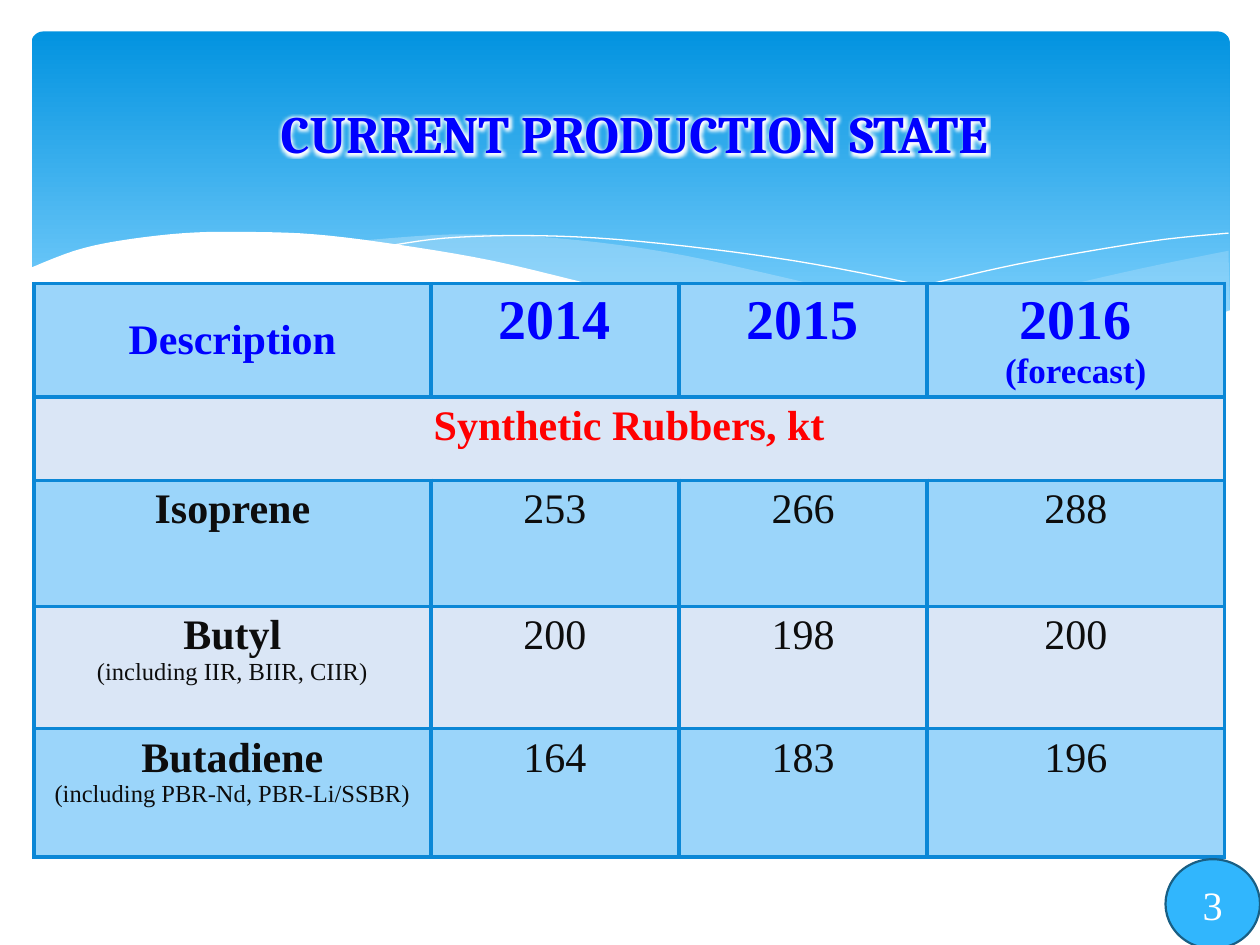
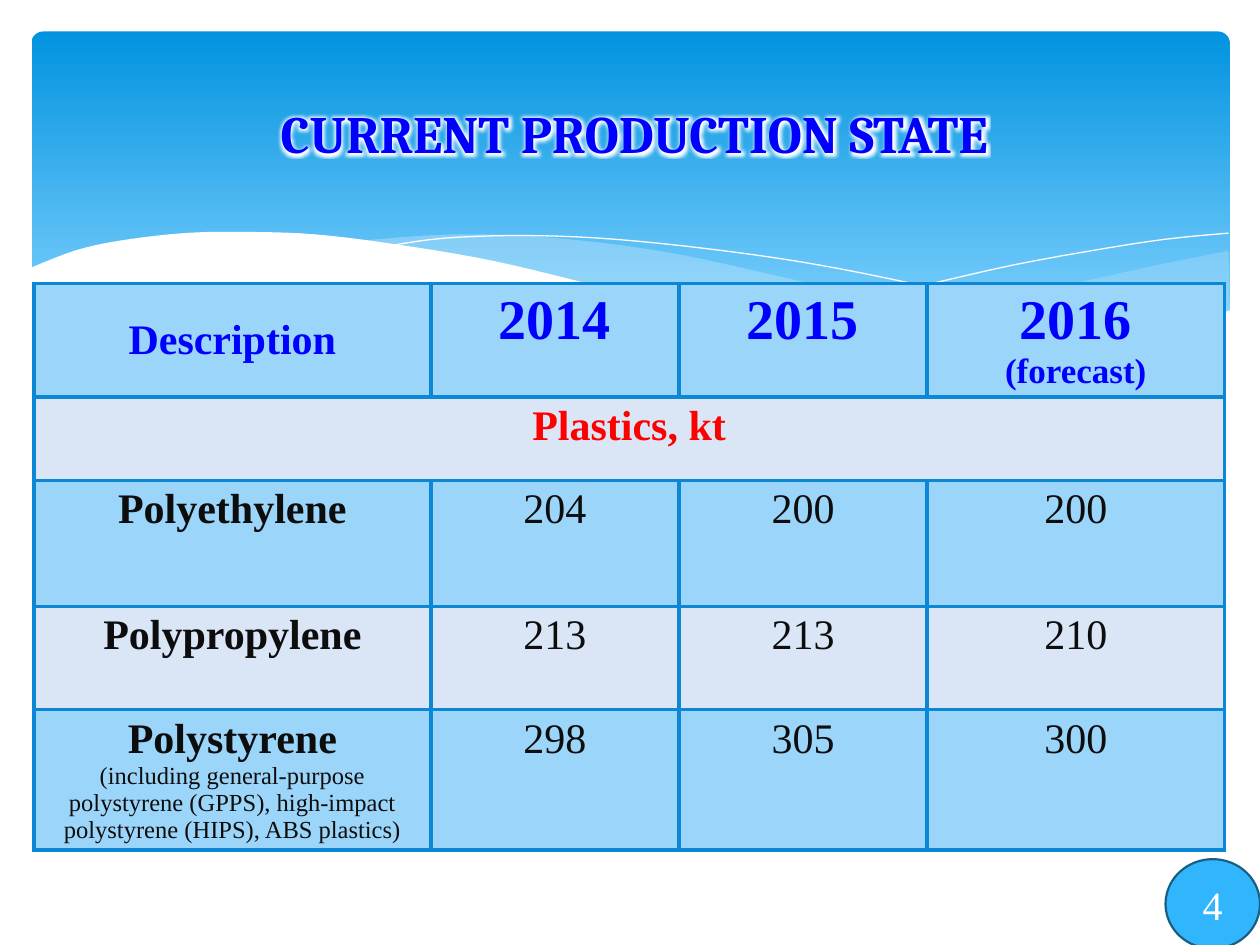
from lxml.etree import SubElement
from pptx import Presentation
from pptx.dml.color import RGBColor
from pptx.enum.shapes import MSO_SHAPE
from pptx.enum.text import MSO_ANCHOR, MSO_AUTO_SIZE, PP_ALIGN
from pptx.oxml.ns import qn
from pptx.util import Pt

COLORS = {
    "band_top": "0293E0", "band_bottom": "83D3FE", "wave": "C6E7FC",
    "white": "FFFFFF", "heading": "0000FF", "group": "FF0000",
    "text": "0D0D0D", "row_blue": "9BD5FA", "row_pale": "DAE6F6",
    "border": "0B87D6", "badge": "31B6FD", "badge_line": "195F84",
}
TITLE_FONT, TABLE_FONT = "Cambria", "Times New Roman"
TITLE = "CURRENT PRODUCTION STATE"
COLUMN_WIDTHS = (226.8, 141.8, 141.8, 169.9)

# Anchor points of the waves, in points
RIGHT_WAVE_TOP = [(702, 143.3), (652.3, 153.4), (599, 165.6), (542.2, 178.6),
                  (475.9, 190.8)]
RIGHT_WAVE_BOTTOM = [(475.9, 190.8), (507.6, 195.1), (545, 198.7), (586, 200.2),
                     (627.8, 197.3), (668.2, 189.4), (702.7, 177.8)]
MIDDLE_WAVE_TOP = [(643, 196.6), (581, 187.2), (508.3, 172.8), (441.4, 157),
                   (380.2, 144), (318.2, 136.1), (259.9, 133.9), (205.9, 137.5)]
MIDDLE_WAVE_BOTTOM = [(205.9, 137.5), (260.6, 146.2), (323.3, 159.8),
                      (381.6, 172.8), (445, 185.8), (510.5, 195.8),
                      (565.2, 200), (603.4, 200.2), (643, 196.6)]
LONG_CREST = [(222.5, 140.4), (254.2, 136.1), (299.5, 134.6), (352.1, 136.8),
              (419, 144), (478.8, 153.4), (547.2, 167.8), (598.3, 180.7),
              (653, 195.8)]
RIGHT_CREST = [(441.4, 185), (483.8, 173.5), (538.6, 160.6), (580.3, 151.2),
               (623.5, 143.3), (665.3, 136.8), (702, 133.2)]
FRONT_WAVE = [(703.4, 177.1), (662.4, 190.8), (621.4, 197.3), (582.5, 199.4),
              (522.7, 195.8), (465.8, 188.6), (399.6, 176.4), (342, 163.4),
              (281.5, 149), (226.8, 139.7), (180, 133.9), (139, 132.5),
              (105.1, 133.2), (68.4, 137.5), (42.5, 143.3), (16.6, 153.4)]
FRONT_WAVE_BASE = [(16.6, 236.9), (703.4, 236.9)]


def smooth(anchors, steps=5):
    """Catmull-Rom curve through the anchors."""
    padded = [anchors[0], *anchors, anchors[-1]]
    curve = [anchors[0]]
    for a, b, c, d in zip(padded, padded[1:], padded[2:], padded[3:]):
        for step in range(1, steps + 1):
            t = step / steps
            curve.append(tuple(
                (2 * q + (r - p) * t + (2 * p - 5 * q + 4 * r - s) * t ** 2
                 + (3 * q - p - 3 * r + s) * t ** 3) / 2
                for p, q, r, s in zip(a, b, c, d)))
    return curve


def rgb(name):
    return RGBColor.from_string(COLORS[name])


class Deck:
    def __init__(self):
        self.prs = Presentation()
        self.prs.slide_width, self.prs.slide_height = Pt(720), Pt(540)
        self.layout = self.prs.slide_layouts[5]
        for holder in list(self.layout.placeholders)[1:]:
            holder.element.getparent().remove(holder.element)
        self.slide = None

    def new_slide(self):
        self.slide = self.prs.slides.add_slide(self.layout)

    def set_text(self, paragraph, text, size, color, font=TABLE_FONT, bold=False):
        paragraph.text = text
        paragraph.alignment = PP_ALIGN.CENTER
        paragraph.font.name, paragraph.font.size = font, Pt(size)
        paragraph.font.bold = bold
        paragraph.font.color.rgb = rgb(color)

    def title(self, text):
        title = self.slide.shapes.title
        title.left, title.top, title.width, title.height = (
            Pt(v) for v in (19.4, 26.6, 686.2, 98.6))
        frame = title.text_frame
        frame.auto_size = MSO_AUTO_SIZE.NONE
        frame.vertical_anchor = MSO_ANCHOR.MIDDLE
        self.set_text(frame.paragraphs[0], text, 30, "heading", TITLE_FONT, True)
        # White glow around the letters
        properties = frame.paragraphs[0].runs[0]._r.get_or_add_rPr()
        effects = SubElement(properties, qn("a:effectLst"))
        glow = SubElement(effects, qn("a:glow"), rad=str(Pt(5)))
        SubElement(glow, qn("a:srgbClr"), val=COLORS["white"])

    def shape(self, kind, left, top, width, height):
        shape = self.slide.shapes.add_shape(
            kind, Pt(left), Pt(top), Pt(width), Pt(height))
        shape.shadow.inherit = False
        return shape

    def outline(self, points, closed):
        # Local units are hundredths of a point
        (x, y), *rest = [(x * 100, y * 100) for x, y in points]
        builder = self.slide.shapes.build_freeform(x, y, scale=Pt(1) / 100)
        builder.add_line_segments(rest, close=closed)
        shape = builder.convert_to_shape()
        shape.shadow.inherit = False
        return shape

    def wave(self, points, color, opacity=100):
        wave = self.outline(points, True)
        wave.line.fill.background()
        wave.fill.solid()
        wave.fill.fore_color.rgb = rgb(color)
        if opacity < 100:
            tint = wave.element.spPr.find(qn("a:solidFill"))[0]
            SubElement(tint, qn("a:alpha"), val=str(opacity * 1000))

    def crest(self, anchors):
        crest = self.outline(smooth(anchors), False)
        crest.fill.background()
        crest.line.color.rgb = rgb("white")
        crest.line.width = Pt(0)

    def band(self):
        """Draw the header band, then hand it to the layout."""
        band = self.shape(MSO_SHAPE.ROUNDED_RECTANGLE, 18, 18, 684.7, 194.4)
        band.adjustments[0] = 0.034
        band.line.fill.background()
        band.fill.gradient()
        band.fill.gradient_angle = 270
        stops = zip(band.fill.gradient_stops,
                    (("band_top", 0), ("band_bottom", 0.9)))
        for stop, (color, position) in stops:
            stop.color.rgb, stop.position = rgb(color), position
        self.wave(smooth(RIGHT_WAVE_TOP) + smooth(RIGHT_WAVE_BOTTOM), "wave", 29)
        self.wave(smooth(MIDDLE_WAVE_TOP) + smooth(MIDDLE_WAVE_BOTTOM), "wave", 40)
        self.crest(LONG_CREST)
        self.crest(RIGHT_CREST)
        self.wave(smooth(FRONT_WAVE) + FRONT_WAVE_BASE, "white")
        for part in list(self.slide.shapes):
            if not part.is_placeholder:
                self.layout.shapes.element.append(part.element)

    def cell(self, cell, fill, color, lines):
        """Each line is (text, size, bold)."""
        properties = cell._tc.get_or_add_tcPr()
        for side in ("lnL", "lnR", "lnT", "lnB"):
            border = SubElement(properties, qn(f"a:{side}"), w=str(Pt(2.25)))
            solid = SubElement(border, qn("a:solidFill"))
            SubElement(solid, qn("a:srgbClr"), val=COLORS["border"])
        cell.fill.solid()
        cell.fill.fore_color.rgb = rgb(fill)
        frame = cell.text_frame
        for i, (text, size, bold) in enumerate(lines):
            paragraph = frame.add_paragraph() if i else frame.paragraphs[0]
            self.set_text(paragraph, text, size, color, bold=bold)

    def production_table(self, group, products, row_heights):
        table = self.slide.shapes.add_table(
            len(row_heights), len(COLUMN_WIDTHS), Pt(19.4), Pt(162),
            Pt(sum(COLUMN_WIDTHS)), Pt(sum(row_heights))).table
        table.first_row = table.horz_banding = False
        for column, width in zip(table.columns, COLUMN_WIDTHS):
            column.width = Pt(width)
        for row, height in zip(table.rows, row_heights):
            row.height = Pt(height)

        # Heading row and product group
        headings = [[("Description", 24, True)], [("2014", 32, True)],
                    [("2015", 32, True)],
                    [("2016", 32, True), ("(forecast)", 20, True)]]
        for c, lines in enumerate(headings):
            self.cell(table.cell(0, c), "row_blue", "heading", lines)
            self.cell(table.cell(1, c), "row_pale", "group",
                      [] if c else [(group, 24, True)])
        table.cell(0, 0).vertical_anchor = MSO_ANCHOR.MIDDLE
        table.cell(1, 0).merge(table.cell(1, len(COLUMN_WIDTHS) - 1))

        # Products
        for r, (product, detail, *volumes) in enumerate(products, 2):
            fill = "row_pale" if r % 2 else "row_blue"
            name = [(product, 24, True)] + ([(detail, 14, False)] if detail else [])
            self.cell(table.cell(r, 0), fill, "text", name)
            for c, volume in enumerate(volumes, 1):
                self.cell(table.cell(r, c), fill, "text",
                          [(str(volume), 24, False)])

    def page_badge(self, number):
        badge = self.shape(MSO_SHAPE.OVAL, 666, 491, 54, 51.1)
        badge.fill.solid()
        badge.fill.fore_color.rgb = rgb("badge")
        badge.line.color.rgb = rgb("badge_line")
        badge.line.width = Pt(1.25)
        badge.text_frame.vertical_anchor = MSO_ANCHOR.MIDDLE
        self.set_text(badge.text_frame.paragraphs[0], str(number), 23, "white")


PAGES = [
    (3, "Synthetic Rubbers, kt", [
        ("Isoprene", "", 253, 266, 288),
        ("Butyl", "(including IIR, BIIR, CIIR)", 200, 198, 200),
        ("Butadiene", "(including PBR-Nd, PBR-Li/SSBR)", 164, 183, 196),
    ], (64.8, 47.5, 72, 69.8, 73.4)),
    (4, "Plastics, kt", [
        ("Polyethylene", "", 204, 200, 200),
        ("Polypropylene", "", 213, 213, 210),
        ("Polystyrene", "(including general-purpose polystyrene (GPPS), "
         "high-impact polystyrene (HIPS), ABS plastics)", 298, 305, 300),
    ], (64.8, 47.5, 72, 59, 73.4)),
]


def main():
    deck = Deck()
    for i, (number, group, products, row_heights) in enumerate(PAGES):
        deck.new_slide()
        if i == 0:
            deck.band()
        deck.title(TITLE)
        deck.production_table(group, products, row_heights)
        deck.page_badge(number)
    deck.prs.save("out.pptx")


if __name__ == "__main__":
    main()
